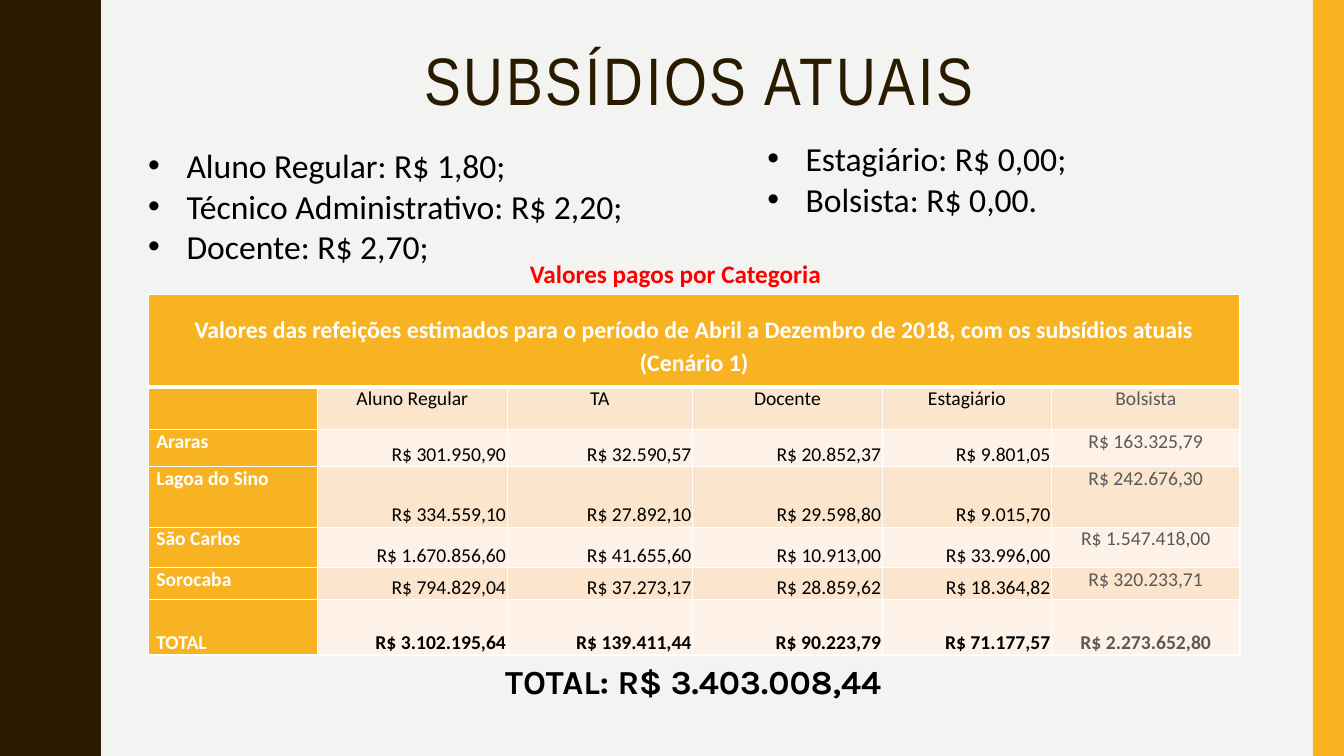
from pptx import Presentation
from pptx.dml.color import RGBColor
from pptx.enum.shapes import MSO_SHAPE
from pptx.enum.text import MSO_ANCHOR as ANCHOR, MSO_AUTO_SIZE as FIT, PP_ALIGN as ALIGN
from pptx.oxml import parse_xml
from pptx.oxml.ns import nsdecls
from pptx.util import Inches, Pt

COLORS = {
    "background": "F3F3F2", "brown": "2A1A00", "amber": "F8B323",
    "peach": "FCE5CD", "cream": "FEF2E8", "white": "FFFFFF",
    "black": "000000", "gray": "595959", "red": "FF0000",
}


def color(name):
    return RGBColor.from_string(COLORS[name])


def write(paragraph, text, ink, align=ALIGN.LEFT, **font_format):
    """Fill a paragraph with one formatted run and return the run."""
    paragraph.alignment = align
    paragraph.space_before = Pt(0)
    run = paragraph.add_run()
    run.text = text
    run.font.color.rgb = color(ink)
    for attribute, value in font_format.items():
        setattr(run.font, attribute, value)
    return run


prs = Presentation()
prs.slide_width, prs.slide_height = Inches(13.33), Inches(7.5)
slide = prs.slides.add_slide(prs.slide_layouts[3])
slide.background.fill.solid()
slide.background.fill.fore_color.rgb = color("background")

# Wavy left edge: half a wave, mirrored, repeated five times
half_wave = [(0.78, 0), (0.78, 0.07), (0.79, 0.14), (0.8, 0.2), (0.81, 0.25),
             (0.83, 0.29), (0.85, 0.33), (0.87, 0.38), (0.89, 0.42), (0.91, 0.46),
             (0.93, 0.5), (0.95, 0.55), (0.96, 0.61), (0.97, 0.68), (0.97, 0.75)]
period = 1.5
wave = half_wave + [(x, period - y) for x, y in reversed(half_wave[:-1])]
edge = [(x, y + period * n) for n in range(5) for x, y in wave]
builder = slide.shapes.build_freeform(0, 0, scale=Inches(1))
builder.add_line_segments(edge + [(0, 7.5)], close=True)
wavy_band = builder.convert_to_shape()

# Right strip
right_strip = slide.shapes.add_shape(
    MSO_SHAPE.RECTANGLE, Inches(13.02), 0, Inches(0.31), Inches(7.5))
for band, fill in ((wavy_band, "brown"), (right_strip, "amber")):
    band.shadow.inherit = False
    band.fill.solid()
    band.fill.fore_color.rgb = color(fill)
    band.line.fill.background()

# Title and the two lists of subsidies
heading, left_list, right_list = slide.placeholders
subsidies = [
    (left_list, (1.37, 1.39, 6.1, 1.31),
     ["Aluno Regular: R$ 1,80;", "Técnico Administrativo: R$ 2,20;", "Docente: R$ 2,70;"]),
    (right_list, (7.51, 1.32, 5.4, 0.91),
     ["Estagiário: R$ 0,00;", "Bolsista: R$ 0,00."]),
]
for holder, box in [(heading, (1.37, 0.42, 11.13, 0.95))] + [s[:2] for s in subsidies]:
    holder.left, holder.top, holder.width, holder.height = map(Inches, box)
    holder.text_frame.auto_size = FIT.NONE
    holder.text_frame.vertical_anchor = ANCHOR.TOP

title_line = heading.text_frame.paragraphs[0]
title_line.line_spacing = 0.9
title_run = write(title_line, "SUBSÍDIOS ATUAIS", "brown", ALIGN.CENTER,
                  name="Arial Narrow", size=Pt(48))
title_run.font._element.set("spc", "200")

for holder, _, items in subsidies:
    frame = holder.text_frame
    for i, item in enumerate(items):
        line = frame.add_paragraph() if i else frame.paragraphs[0]
        write(line, item, "black", name="Calibri", size=Pt(24))
        properties = line._p.get_or_add_pPr()
        properties.set("marL", str(Inches(0.38)))
        properties.set("indent", str(-Inches(0.38)))
        properties.append(parse_xml(f'<a:buFont {nsdecls("a")} typeface="Arial"/>'))
        properties.append(parse_xml(f'<a:buChar {nsdecls("a")} char="•"/>'))

# Table of amounts paid
banner = ("Valores das refeições estimados para o período de Abril a Dezembro "
          "de 2018, com os subsídios atuais (Cenário 1)")
amounts = [
    [banner, "", "", "", "", ""],
    ["", "Aluno Regular", "TA", "Docente", "Estagiário", "Bolsista"],
    ["Araras", "R$ 301.950,90", "R$ 32.590,57", "R$ 20.852,37", "R$ 9.801,05", "R$ 163.325,79"],
    ["Lagoa do Sino", "R$ 334.559,10", "R$ 27.892,10", "R$ 29.598,80", "R$ 9.015,70",
     "R$ 242.676,30"],
    ["São Carlos", "R$ 1.670.856,60", "R$ 41.655,60", "R$ 10.913,00", "R$ 33.996,00",
     "R$ 1.547.418,00"],
    ["Sorocaba", "R$ 794.829,04", "R$ 37.273,17", "R$ 28.859,62", "R$ 18.364,82",
     "R$ 320.233,71"],
    ["TOTAL", "R$ 3.102.195,64", "R$ 139.411,44", "R$ 90.223,79", "R$ 71.177,57",
     "R$ 2.273.652,80"],
]
column_widths = [1.68, 1.88, 1.84, 1.88, 1.68, 1.87]
row_heights = [0.92, 0.42, 0.37, 0.6, 0.4, 0.32, 0.55]
total_row, bolsista_column = len(amounts) - 1, len(column_widths) - 1
table = slide.shapes.add_table(
    len(row_heights), len(column_widths), Inches(1.47), Inches(2.92),
    Inches(sum(column_widths)), Inches(sum(row_heights))).table
for column, width in zip(table.columns, column_widths):
    column.width = Inches(width)
for row, height in zip(table.rows, row_heights):
    row.height = Inches(height)
table.cell(0, 0).merge(table.cell(0, bolsista_column))

for r, values in enumerate(amounts):
    for c, value in enumerate(values):
        cell = table.cell(r, c)
        is_banner, is_label = r == 0, c == 0
        is_amount = r > 1 and 0 < c < bolsista_column

        # White borders, thicker under the banner
        cell_properties = cell._tc.get_or_add_tcPr()
        for side in "LRTB":
            thick = (r, side) in ((0, "B"), (1, "T"))
            cell_properties.append(parse_xml(
                f'<a:ln{side} {nsdecls("a")} w="{Pt(3 if thick else 1)}"><a:solidFill>'
                f'<a:srgbClr val="{COLORS["white"]}"/></a:solidFill></a:ln{side}>'))

        cell.fill.solid()
        stripe = "peach" if r % 2 else "cream"
        cell.fill.fore_color.rgb = color("amber" if is_banner or is_label else stripe)

        side_margin = 0.17 if is_banner else 0.01 if is_amount else 0.08
        cell.margin_left = cell.margin_right = Inches(side_margin)
        cell.margin_top = cell.margin_bottom = Inches(0.09 if is_banner else 0)
        at_bottom = is_banner or is_amount or r == total_row
        cell.vertical_anchor = ANCHOR.BOTTOM if at_bottom else ANCHOR.TOP

        line = cell.text_frame.paragraphs[0]
        line.font.size = Pt(14)
        if value:
            ink = ("white" if is_label else "gray" if c == bolsista_column else "black")
            align = (ALIGN.RIGHT if is_amount else
                     ALIGN.LEFT if is_label and not is_banner else ALIGN.CENTER)
            write(line, value, ink, align, name="Calibri",
                  size=Pt(17 if is_banner else 14), bold=is_label or r == total_row)
        if is_banner:
            line.line_spacing = 1.15

# Table caption and grand total
captions = [
    ("Valores pagos por Categoria", (4.88, 2.51, 3.64, 0.4), "red", "Calibri", 18),
    ("TOTAL: R$ 3.403.008,44", (2.68, 6.51, 8.39, 0.5), "black", "Karla", 24),
]
for text, box, ink, font, size in captions:
    frame = slide.shapes.add_textbox(*map(Inches, box)).text_frame
    frame.word_wrap = True
    write(frame.paragraphs[0], text, ink, ALIGN.CENTER, name=font, size=Pt(size), bold=True)

prs.save("out.pptx")
